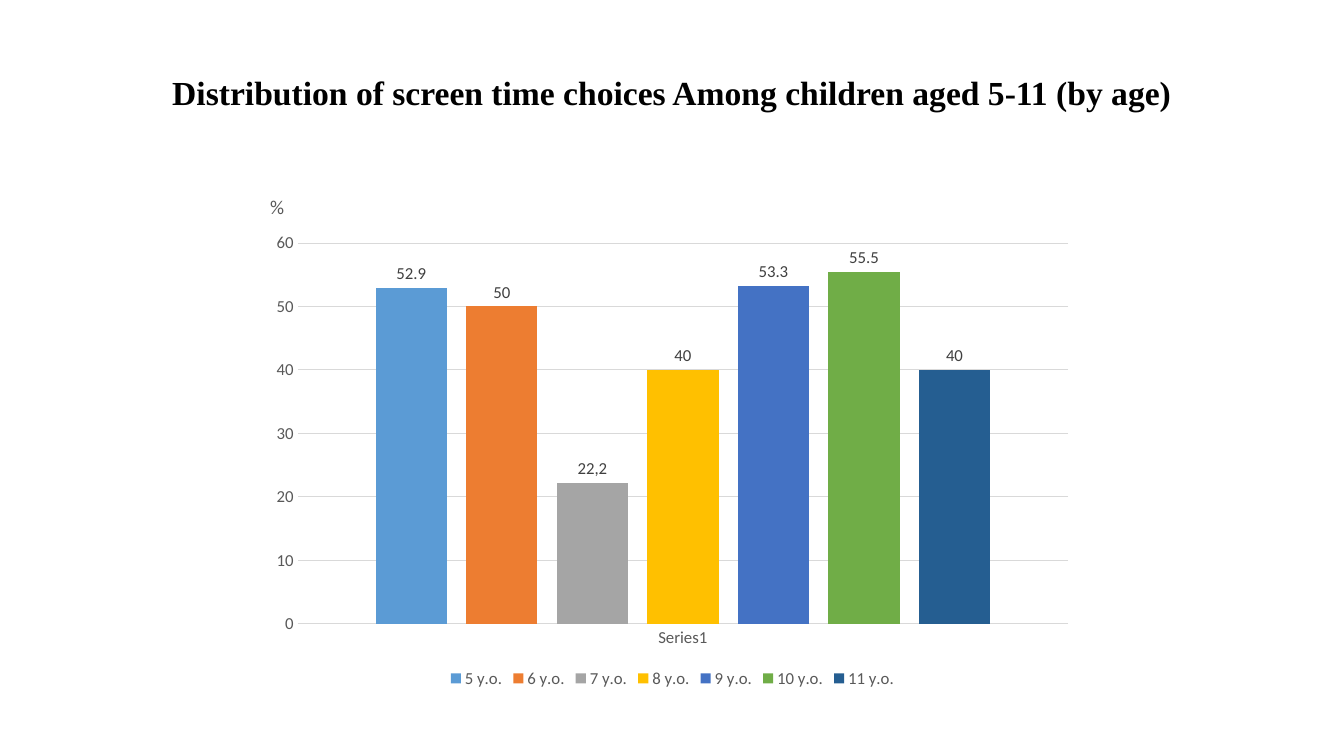
from dataclasses import dataclass

from pptx import Presentation
from pptx.chart.data import CategoryChartData
from pptx.dml.color import RGBColor
from pptx.enum.chart import XL_CHART_TYPE as ChartType
from pptx.enum.chart import XL_LABEL_POSITION as LabelPosition
from pptx.enum.chart import XL_LEGEND_POSITION as LegendPosition
from pptx.enum.chart import XL_TICK_MARK as TickMark
from pptx.enum.text import MSO_AUTO_SIZE as AutoSize
from pptx.enum.text import PP_ALIGN as Align
from pptx.util import Pt

GREY_TEXT = "595959"
LABEL_TEXT = "404040"
GRID = "D9D9D9"


@dataclass
class AgeGroup:
    name: str
    percent: float
    color: str
    label: str = ""  # replaces the automatic value label


@dataclass
class Caption:
    text: str
    left: float
    top: float
    width: float
    height: float
    font: str
    size: float
    color: str
    bold: bool = False
    align: Align = Align.LEFT
    wrap: bool = True


AGE_GROUPS = [
    AgeGroup("5 y.o.", 52.9, "5B9BD5"),
    AgeGroup("6 y.o.", 50, "ED7D31"),
    AgeGroup("7 y.o.", 22.2, "A5A5A5", label="22,2"),
    AgeGroup("8 y.o.", 40, "FFC000"),
    AgeGroup("9 y.o.", 53.3, "4472C4"),
    AgeGroup("10 y.o.", 55.5, "70AD47"),
    AgeGroup("11 y.o.", 40, "255E91"),
]

CAPTIONS = [
    Caption("%", 185.8, 135.4, 31, 24.5, "Calibri", 14, GREY_TEXT),
    Caption("Distribution of screen time choices Among children aged 5-11 (by age)",
            112.3, 47.5, 735.1, 36, "Times New Roman", 24, "000000",
            bold=True, align=Align.CENTER, wrap=False),
]


def rgb(color: str) -> RGBColor:
    return RGBColor.from_string(color)


def set_font(font, name: str, size: float, color: str, bold: bool = False) -> None:
    font.name = name
    font.size = Pt(size)
    font.bold = bold
    font.color.rgb = rgb(color)


def set_line(line, color: str) -> None:
    line.color.rgb = rgb(color)
    line.width = Pt(0.75)


def add_caption(slide, caption: Caption) -> None:
    box = slide.shapes.add_textbox(Pt(caption.left), Pt(caption.top),
                                   Pt(caption.width), Pt(caption.height))
    frame = box.text_frame
    frame.word_wrap = caption.wrap
    frame.auto_size = AutoSize.SHAPE_TO_FIT_TEXT
    paragraph = frame.paragraphs[0]
    paragraph.text = caption.text
    paragraph.alignment = caption.align
    set_font(paragraph.font, caption.font, caption.size, caption.color, caption.bold)


def style_series(series, group: AgeGroup) -> None:
    series.format.fill.solid()
    series.format.fill.fore_color.rgb = rgb(group.color)
    series.invert_if_negative = False
    labels = series.data_labels
    labels.show_value = True
    labels.position = LabelPosition.OUTSIDE_END
    set_font(labels.font, "Calibri", 12, LABEL_TEXT)
    if group.label:
        label = series.points[0].data_label
        paragraph = label.text_frame.paragraphs[0]
        run = paragraph.add_run()
        run.text = group.label
        set_font(run.font, "Calibri", 12, LABEL_TEXT)
        label.position = LabelPosition.OUTSIDE_END


def add_age_chart(slide, groups: list[AgeGroup]) -> None:
    data = CategoryChartData()
    data.categories = ["Series1"]
    for group in groups:
        data.add_series(group.name, [group.percent])
    chart = slide.shapes.add_chart(ChartType.COLUMN_CLUSTERED, Pt(185.8), Pt(159.8),
                                   Pt(589), Pt(334.8), data).chart
    chart.has_title = False
    set_font(chart.font, "Calibri", 12, GREY_TEXT)

    # Bars
    plot = chart.plots[0]
    plot.gap_width = 219
    plot.overlap = -27
    plot.vary_by_categories = False
    for series, group in zip(plot.series, groups):
        style_series(series, group)

    # Axes and gridlines
    for axis in (chart.category_axis, chart.value_axis):
        axis.major_tick_mark = axis.minor_tick_mark = TickMark.NONE
        set_font(axis.tick_labels.font, "Calibri", 12, GREY_TEXT)
    set_line(chart.category_axis.format.line, GRID)
    value_axis = chart.value_axis
    value_axis.minimum_scale, value_axis.maximum_scale = 0, 60
    value_axis.major_unit = 10
    value_axis.format.line.fill.background()
    set_line(value_axis.major_gridlines.format.line, GRID)

    # Legend
    chart.has_legend = True
    chart.legend.position = LegendPosition.BOTTOM
    chart.legend.include_in_layout = False
    set_font(chart.legend.font, "Calibri", 12, GREY_TEXT)


def main() -> None:
    presentation = Presentation()
    presentation.slide_width, presentation.slide_height = Pt(960), Pt(540)
    slide = presentation.slides.add_slide(presentation.slide_layouts[6])
    add_age_chart(slide, AGE_GROUPS)
    for caption in CAPTIONS:
        add_caption(slide, caption)
    presentation.save("out.pptx")


if __name__ == "__main__":
    main()
